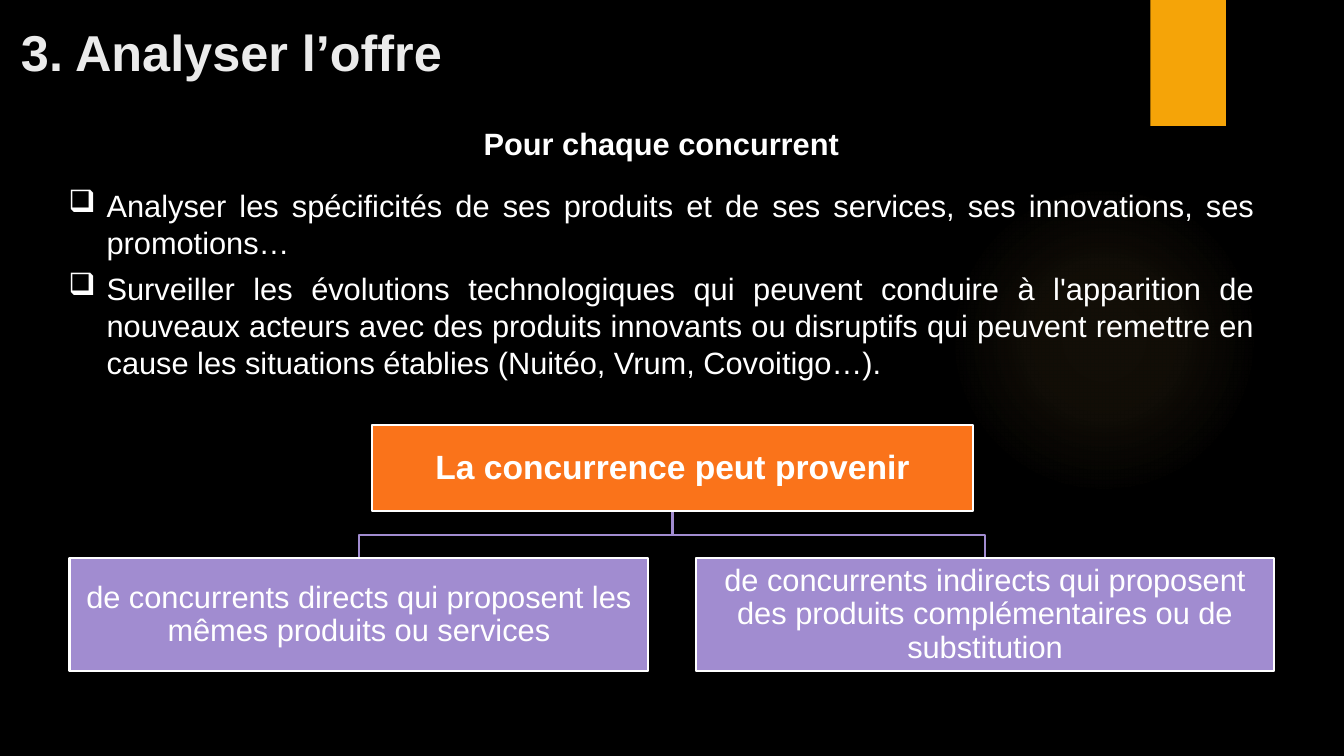
from lxml import etree
from pptx import Presentation
from pptx.dml.color import RGBColor as Rgb
from pptx.enum.shapes import MSO_SHAPE as Preset
from pptx.enum.text import MSO_ANCHOR as Anchor, PP_ALIGN as Align
from pptx.oxml import parse_xml
from pptx.oxml.ns import nsdecls, qn
from pptx.util import Inches, Pt

COLOURS = {
    "black": "000000", "white": "FFFFFF", "title": "EBEBEB",
    "accent": "F5A408", "glow": "FAC96A", "orange": "FA731A", "violet": "A18CD0",
}
GLOW_STOPS = [(0, 7), (36, 6), (69, 0), (100, 0)]


class SlideBuilder:
    font_name = "Arial"
    line_width = Pt(1.5)

    def __init__(self, page):
        self.page = page
        self.page.background.fill.solid()
        self.page.background.fill.fore_color.rgb = self.colour("black")

    def colour(self, name):
        return Rgb.from_string(COLOURS[name])

    def format_para(self, para, size, bold=False, colour="white", align=Align.LEFT):
        para.alignment = align
        for span in para.runs:
            span.font.name = self.font_name
            span.font.size = Pt(size)
            span.font.bold = bold
            span.font.color.rgb = self.colour(colour)

    def shape(self, preset, left, top, width, height, fill):
        shape = self.page.shapes.add_shape(
            preset, Inches(left), Inches(top), Inches(width), Inches(height))
        shape.shadow.inherit = False
        shape.fill.solid()
        shape.fill.fore_color.rgb = self.colour(fill)
        shape.line.fill.background()
        return shape

    def glow(self, left, top, size):
        shape = self.shape(Preset.OVAL, left, top, size, size, "glow")
        stops = "".join(
            f'<a:gs pos="{place * 1000}"><a:srgbClr val="{COLOURS["glow"]}">'
            f'<a:alpha val="{alpha * 1000}"/></a:srgbClr></a:gs>'
            for place, alpha in GLOW_STOPS)
        gradient = parse_xml(
            f'<a:gradFill {nsdecls("a")} rotWithShape="1"><a:gsLst>{stops}</a:gsLst>'
            '<a:path path="circle"><a:fillToRect l="50000" t="50000" r="50000" b="50000"/>'
            '</a:path></a:gradFill>')
        properties = shape.fill._xPr
        properties.replace(properties.find(qn("a:solidFill")), gradient)

    def text_box(self, left, top, width, height, anchor=Anchor.TOP):
        box = self.page.shapes.add_textbox(
            Inches(left), Inches(top), Inches(width), Inches(height))
        box.text_frame.word_wrap = True
        box.text_frame.vertical_anchor = anchor
        return box.text_frame

    def title(self, text, left, top, width, height):
        frame = self.text_box(left, top, width, height, Anchor.BOTTOM)
        frame.text = text
        self.format_para(frame.paragraphs[0], 36, True, "title")

    def bullet_list(self, heading, items, left, top, width, height):
        frame = self.text_box(left, top, width, height)
        frame.text = heading
        self.format_para(frame.paragraphs[0], 22, True, align=Align.CENTER)
        for text, space_before in items:
            para = frame.add_paragraph()
            para.text = text
            para.space_before = Pt(space_before)
            properties = para._p.get_or_add_pPr()
            properties.set("marL", str(Inches(0.38)))
            properties.set("indent", str(-Inches(0.38)))
            etree.SubElement(properties, qn("a:buChar")).set("char", "❑")
            self.format_para(para, 22, align=Align.JUSTIFY)

    def card(self, text, left, top, width, height, fill, size, bold=False):
        shape = self.shape(Preset.RECTANGLE, left, top, width, height, fill)
        shape.line.color.rgb = self.colour("white")
        shape.line.width = self.line_width
        frame = shape.text_frame
        frame.word_wrap = True
        frame.vertical_anchor = Anchor.MIDDLE
        frame.margin_left = frame.margin_right = Inches(0.02)
        frame.margin_top = frame.margin_bottom = Inches(0.02)
        frame.text = text
        frame.paragraphs[0].line_spacing = 0.9
        self.format_para(frame.paragraphs[0], size, bold, align=Align.CENTER)

    def branch(self, start_x, start_y, end_x, end_y):
        middle_y = (start_y + end_y) / 2
        points = [(start_x, middle_y), (end_x, middle_y), (end_x, end_y)]
        builder = self.page.shapes.build_freeform(
            Inches(start_x), Inches(start_y), scale=1.0)
        builder.add_line_segments(
            [(Inches(x), Inches(y)) for x, y in points], close=False)
        shape = builder.convert_to_shape()
        shape.shadow.inherit = False
        shape.fill.background()
        shape.line.color.rgb = self.colour("violet")
        shape.line.width = self.line_width


def main():
    deck = Presentation()
    deck.slide_width, deck.slide_height = Inches(13.33), Inches(7.5)
    slide = SlideBuilder(deck.slides.add_slide(deck.slide_layouts[6]))

    slide.glow(9.41, 1.83, 3.08)
    slide.shape(Preset.RECTANGLE, 11.41, 0, 0.75, 1.25, "accent")
    slide.title("3. Analyser l’offre", 0.11, 0, 11.81, 0.86)
    slide.bullet_list("Pour chaque concurrent", [
        ("Analyser les spécificités de ses produits et de ses services, "
         "ses innovations, ses promotions…", 18),
        ("Surveiller les évolutions technologiques qui peuvent conduire à "
         "l'apparition de nouveaux acteurs avec des produits innovants ou "
         "disruptifs qui peuvent remettre en cause les situations établies "
         "(Nuitéo, Vrum, Covoitigo…).", 6),
    ], 0.58, 1.19, 11.96, 2.66)

    root_x, root_bottom, child_top = 6.67, 5.07, 5.54
    child_width, child_step = 5.74, 6.21
    children = [
        "de concurrents directs qui proposent les mêmes produits ou services",
        "de concurrents indirects qui proposent des produits complémentaires "
        "ou de substitution",
    ]
    child_lefts = [0.69 + index * child_step for index in range(len(children))]
    for left in child_lefts:
        slide.branch(root_x, root_bottom, left + child_width / 2, child_top)
    slide.card("La concurrence peut provenir", 3.69, 4.22, 5.96, 0.85, "orange", 24, True)
    for text, left in zip(children, child_lefts):
        slide.card(text, left, child_top, child_width, 1.12, "violet", 22)

    deck.save("out.pptx")


if __name__ == "__main__":
    main()
